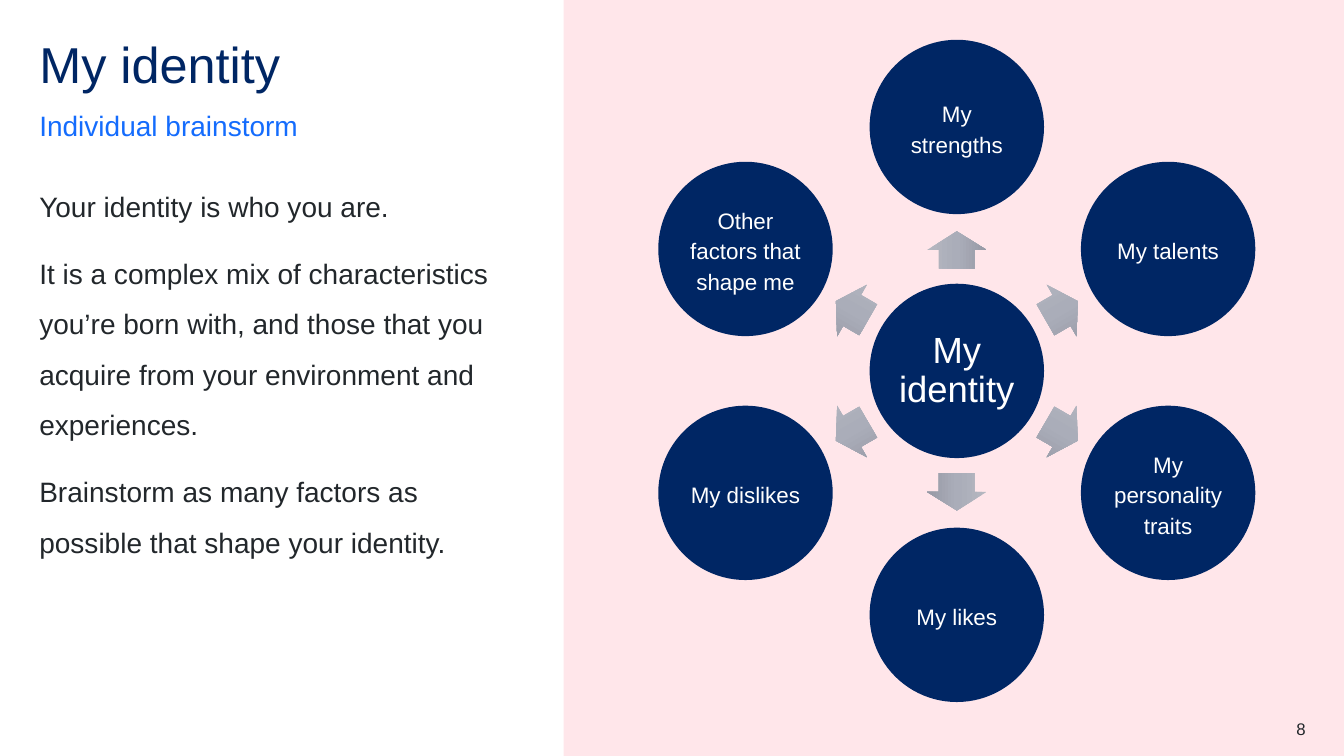
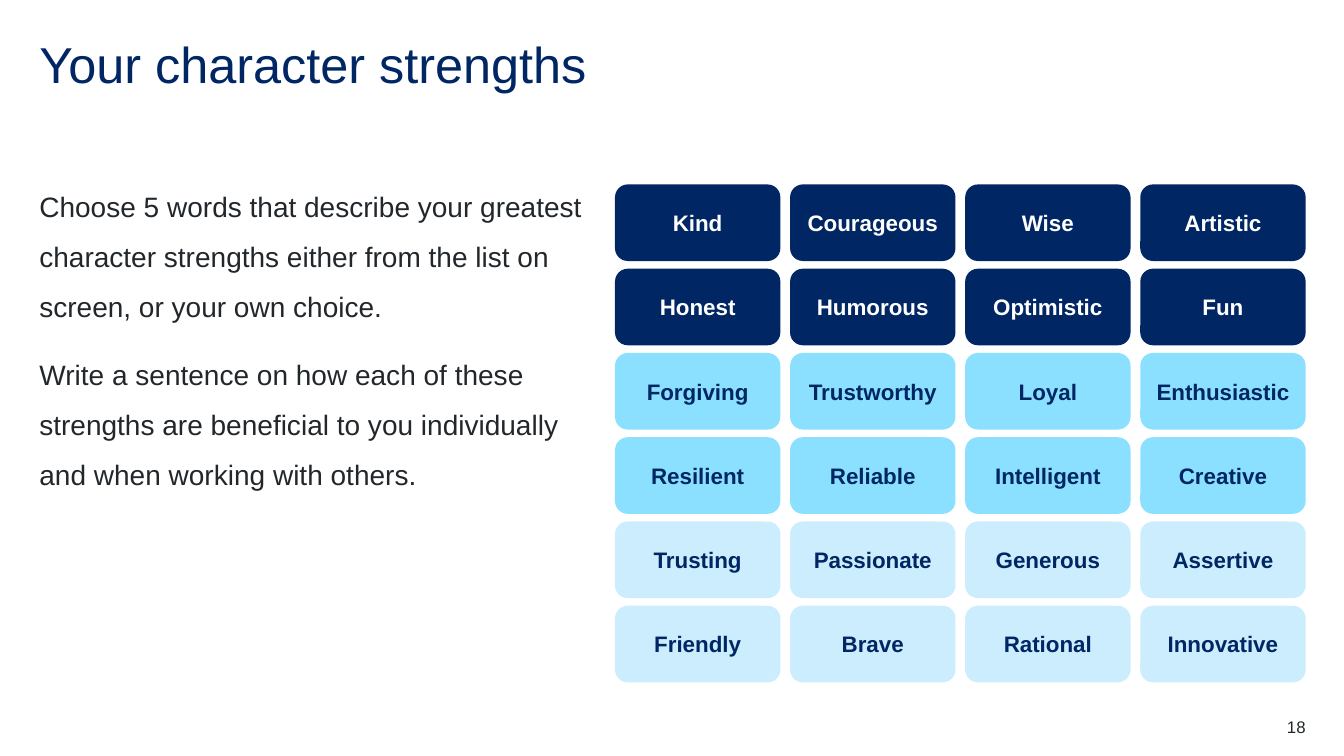
from copy import deepcopy
from dataclasses import dataclass
from math import cos, radians, sin

from pptx import Presentation
from pptx.dml.color import RGBColor
from pptx.enum.shapes import MSO_SHAPE as Preset
from pptx.enum.text import MSO_ANCHOR as Anchor, MSO_AUTO_SIZE as AutoSize, PP_ALIGN as Align
from pptx.oxml.ns import qn
from pptx.util import Inches, Pt


@dataclass(frozen=True)
class Theme:
    font: str = "Arial"
    navy: str = "002664"
    blue: str = "146CFD"
    sky: str = "8CE0FF"
    ice: str = "CBEDFD"
    pink: str = "FFE6EA"
    ink: str = "22272B"
    white: str = "FFFFFF"
    arrow_stops: tuple[str, str, str] = ("B5B7C0", "AAADB9", "9799A5")
    title_size: int = 36
    hub_size: int = 26
    body_size: int = 20
    label_size: int = 16
    number_size: int = 12


THEME = Theme()


@dataclass(frozen=True)
class Area:
    left: float
    top: float
    width: float
    height: float

    def lengths(self) -> tuple:
        return tuple(Inches(n) for n in (self.left, self.top, self.width, self.height))


@dataclass(frozen=True)
class TextStyle:
    size: int
    color: str
    bold: bool = False
    align: Align = Align.LEFT
    anchor: Anchor = Anchor.TOP
    line_spacing: float = 1.0
    space_after: int = 0
    margin: float = 0


@dataclass(frozen=True)
class Node:
    label: str
    angle: int


@dataclass(frozen=True)
class Band:
    fill: str
    color: str
    rows: tuple[tuple[str, ...], ...]


# Shared places and text styles
SLIDE_WIDTH, SLIDE_HEIGHT = 13.33, 7.5
MARGIN, RIGHT_EDGE = 0.39, 12.95
TITLE = TextStyle(THEME.title_size, THEME.navy, line_spacing=0.9)
SUBTITLE = TextStyle(THEME.body_size, THEME.blue, anchor=Anchor.BOTTOM,
                     line_spacing=1.5, space_after=12)
BODY = TextStyle(THEME.body_size, THEME.ink, line_spacing=1.5, space_after=12)
HUB = TextStyle(THEME.hub_size, THEME.white, align=Align.CENTER, anchor=Anchor.MIDDLE,
                line_spacing=0.9)
NODE = TextStyle(THEME.label_size, THEME.white, align=Align.CENTER, anchor=Anchor.MIDDLE,
                 line_spacing=1.14, space_after=12, margin=0.03)

# Wheel: angles run clockwise from the right
WHEEL_X, WHEEL_Y = 9.49, 3.68
CIRCLE_SIZE, NODE_RADIUS, ARROW_RADIUS = 1.73, 2.42, 1.2
ARROW_LENGTH, ARROW_WIDTH = 0.37, 0.59
NODES = (
    Node("My strengths", -90),
    Node("My talents", -30),
    Node("My personality traits", 30),
    Node("My likes", 90),
    Node("My dislikes", 150),
    Node("Other factors that shape me", 210),
)

# Word grid
GRID = Area(6.1, 1.83, 6.85, 4.94)
TILE_WIDTH, TILE_HEIGHT = 1.64, 0.76
BANDS = (
    Band(THEME.navy, THEME.white, (
        ("Kind", "Courageous", "Wise", "Artistic"),
        ("Honest", "Humorous", "Optimistic", "Fun"))),
    Band(THEME.sky, THEME.navy, (
        ("Forgiving", "Trustworthy", "Loyal", "Enthusiastic"),
        ("Resilient", "Reliable", "Intelligent", "Creative"))),
    Band(THEME.ice, THEME.navy, (
        ("Trusting", "Passionate", "Generous", "Assertive"),
        ("Friendly", "Brave", "Rational", "Innovative"))),
)


def write(shape, lines: tuple[str, ...], style: TextStyle) -> None:
    frame = shape.text_frame
    frame.auto_size = AutoSize.NONE
    frame.word_wrap = True
    frame.vertical_anchor = style.anchor
    frame.margin_left = frame.margin_right = Inches(style.margin)
    frame.margin_top = frame.margin_bottom = Inches(style.margin)
    frame.text = "\n".join(lines)
    for para in frame.paragraphs:
        para.alignment = style.align
        para.line_spacing = style.line_spacing
        para.space_before = Pt(0)
        para.space_after = Pt(style.space_after)
        para.font.name = THEME.font
        para.font.size = Pt(style.size)
        para.font.bold = style.bold
        para.font.color.rgb = RGBColor.from_string(style.color)


def add_text(page, area: Area, lines: tuple[str, ...], style: TextStyle) -> None:
    write(page.shapes.add_textbox(*area.lengths()), lines, style)


def add_block(page, preset: Preset, area: Area, fill: str):
    block = page.shapes.add_shape(preset, *area.lengths())
    block.shadow.inherit = False
    block.fill.solid()
    block.fill.fore_color.rgb = RGBColor.from_string(fill)
    block.line.fill.background()
    return block


def add_page(deck, title: str, title_width: float, number: str, number_spacing: float):
    page = deck.slides.add_slide(deck.slide_layouts[5])
    heading = page.shapes.title
    heading.left, heading.top, heading.width, heading.height = Area(
        MARGIN, 0.4, title_width, 0.6).lengths()
    write(heading, (title,), TITLE)
    number_style = TextStyle(THEME.number_size, THEME.ink, align=Align.RIGHT,
                             line_spacing=number_spacing)
    add_text(page, Area(RIGHT_EDGE - 0.79, 7.13, 0.79, 0.2), (number,), number_style)
    return page


def wheel_area(angle: int, radius: float, width: float, height: float) -> Area:
    turn = radians(angle)
    return Area(WHEEL_X + radius * cos(turn) - width / 2,
                WHEEL_Y + radius * sin(turn) - height / 2, width, height)


def add_circle(page, label: str, angle: int, radius: float, style: TextStyle) -> None:
    area = wheel_area(angle, radius, CIRCLE_SIZE, CIRCLE_SIZE)
    write(add_block(page, Preset.OVAL, area, THEME.navy), (label,), style)


def add_spoke(page, angle: int) -> None:
    points_left = angle > 90
    preset = Preset.LEFT_ARROW if points_left else Preset.RIGHT_ARROW
    area = wheel_area(angle, ARROW_RADIUS, ARROW_LENGTH, ARROW_WIDTH)
    arrow = add_block(page, preset, area, THEME.arrow_stops[0])
    arrow.rotation = (angle - 180 if points_left else angle) % 360
    arrow.adjustments[0], arrow.adjustments[1] = 0.6, 0.5
    # Three-stop gradient: a middle stop joins the two that a new one has
    arrow.fill.gradient()
    arrow.fill.gradient_angle = 270
    stop_list = arrow._element.spPr.find(".//" + qn("a:gsLst"))
    stop_list.insert(1, deepcopy(stop_list[0]))
    for index, color in enumerate(THEME.arrow_stops):
        stop = arrow.fill.gradient_stops[index]
        stop.position = index / 2
        stop.color.rgb = RGBColor.from_string(color)


def build_identity(deck) -> None:
    page = add_page(deck, "My identity", 4.8, "8", 1.0)
    panel = add_block(page, Preset.RECTANGLE,
                      Area(5.59, 0, SLIDE_WIDTH - 5.59, SLIDE_HEIGHT), THEME.pink)
    page.shapes._spTree.insert(2, panel._element)  # behind everything else
    add_text(page, Area(MARGIN, 1.07, 4.8, 0.34), ("Individual brainstorm",), SUBTITLE)
    add_text(page, Area(MARGIN, 1.71, 4.8, 5.27), (
        "Your identity is who you are.",
        "It is a complex mix of characteristics you’re born with, and those that you "
        "acquire from your environment and experiences.",
        "Brainstorm as many factors as possible that shape your identity.",
    ), BODY)
    add_circle(page, "My identity", 0, 0, HUB)
    for node in NODES:
        add_circle(page, node.label, node.angle, NODE_RADIUS, NODE)
        add_spoke(page, node.angle)


def build_strengths(deck) -> None:
    page = add_page(deck, "Your character strengths", RIGHT_EDGE - MARGIN, "18", 0.9)
    add_text(page, Area(MARGIN, 1.71, 5.41, 5.27), (
        "Choose 5 words that describe your greatest character strengths either from "
        "the list on screen, or your own choice.",
        "Write a sentence on how each of these strengths are beneficial to you "
        "individually and when working with others.",
    ), BODY)
    rows = [(band, words) for band in BANDS for words in band.rows]
    column_step = (GRID.width - TILE_WIDTH) / (len(rows[0][1]) - 1)
    row_step = (GRID.height - TILE_HEIGHT) / (len(rows) - 1)
    for row, (band, words) in enumerate(rows):
        style = TextStyle(THEME.label_size, band.color, bold=True, align=Align.CENTER,
                          anchor=Anchor.MIDDLE, margin=0.05)
        for column, word in enumerate(words):
            area = Area(GRID.left + column * column_step, GRID.top + row * row_step,
                        TILE_WIDTH, TILE_HEIGHT)
            write(add_block(page, Preset.ROUNDED_RECTANGLE, area, band.fill), (word,), style)


def main() -> None:
    deck = Presentation()
    deck.slide_width, deck.slide_height = Inches(SLIDE_WIDTH), Inches(SLIDE_HEIGHT)
    build_identity(deck)
    build_strengths(deck)
    deck.save("out.pptx")


if __name__ == "__main__":
    main()
